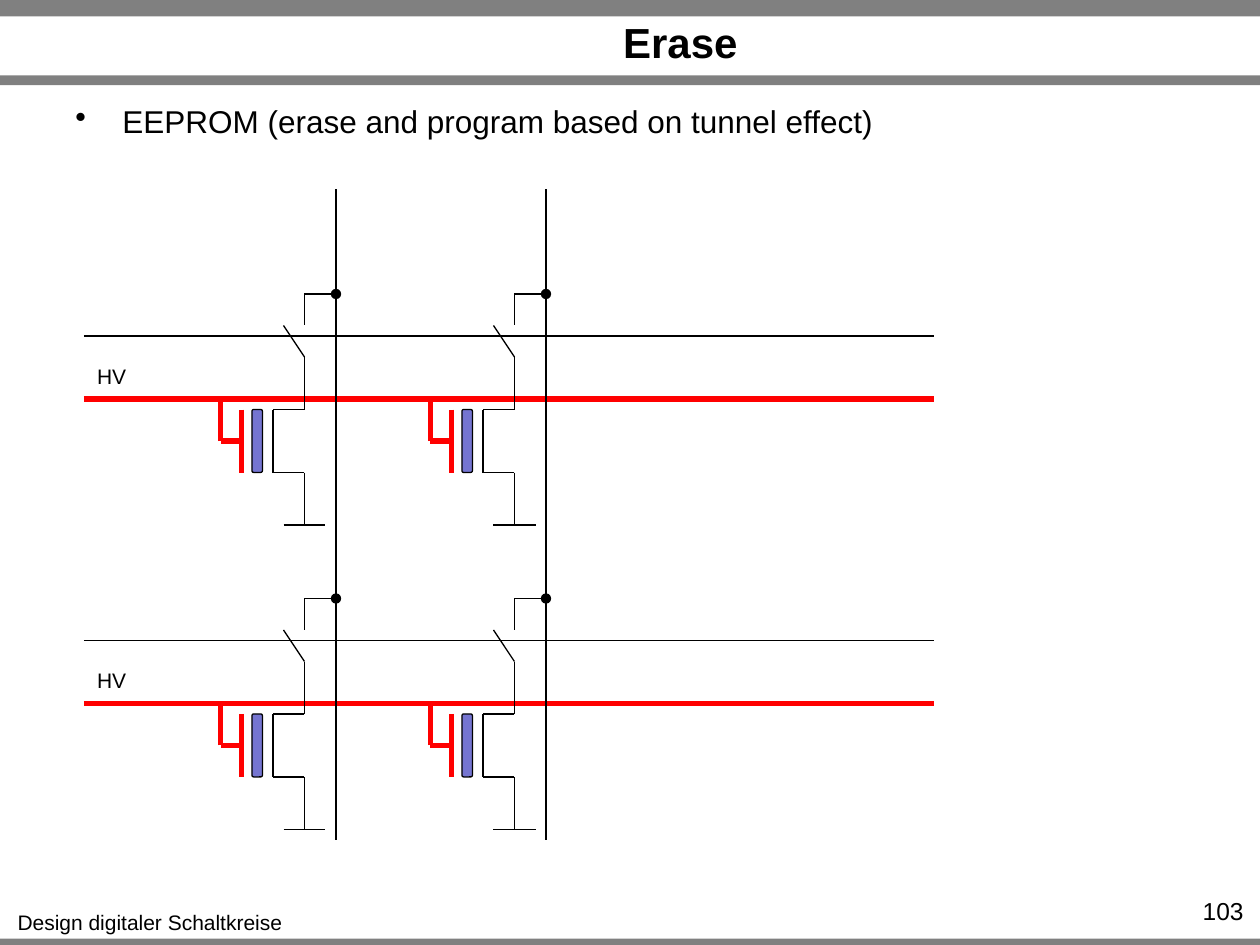
import pptx
import pptx.util
import pptx.dml.color
import pptx.enum.shapes
import pptx.enum.text
import pptx.oxml
import pptx.oxml.ns

Cm = pptx.util.Cm
Pt = pptx.util.Pt
Align = pptx.enum.text.PP_ALIGN
Anchor = pptx.enum.text.MSO_ANCHOR
Preset = pptx.enum.shapes.MSO_SHAPE

# Content
TITLE = "Erase"
BULLET = "EEPROM (erase and program based on tunnel effect)"
FOOTER = "Design digitaler Schaltkreise"
PAGE_NUMBER = "103"
WORD_LABEL = "HV"

THEME = {
    "font": "Arial", "ink": "000000", "bar": "808080",
    "high_voltage": "FF0000", "floating_gate": "7575D1",
    "title": 24, "body": 18, "number": 14, "small": 12,
    "thin": 0.75, "thick": 3,
}

# Page bars: top and height in cm
BARS = [(18.92, 0.2), (0, 0.33), (1.52, 0.2)]

# Circuit grid: one step is a twelfth of an inch
STEP = 2.54 / 12
BIT_LINES = [32, 52]
WORD_LINES = [38, 67]
BIT_SPAN = (18, 80)
WORD_SPAN = (8, 89)
SELECT_OFFSET = -6

# Cell lines in steps, measured from the crossing of bit and word line
CELL_LINES = [
    (-3, -10, -3, -7),   # switch, upper contact
    (-3, -4, -5, -7),    # switch, open arm
    (-3, -4, -3, 1),     # drain lead
    (-3, 1, -6, 1),      # drain
    (-6, 1, -6, 7),      # channel
    (-6, 7, -3, 7),      # source
    (-3, 7, -3, 12),     # source lead
    (-5, 12, -1, 12),    # ground
    (-3, -10, 0, -10),   # link to the bit line
]
GATE_LINES = [(-9, 1, -9, 7), (-9, 4, -11, 4), (-11, 4, -11, 0)]
NODE_LINE = (0, -8, 0, -10)
FLOATING_GATE = (-8, 1, 1, 6)


def color(name):
    return pptx.dml.color.RGBColor.from_string(THEME[name])


def grid(*steps):
    return [Cm(step * STEP) for step in steps]


def add_text(page, text, left, top, width, height, size="small", bold=False,
             align=Align.CENTER, anchor=Anchor.TOP, wrap=True, bullet_indent=None):
    box = page.shapes.add_textbox(Cm(left), Cm(top), Cm(width), Cm(height))
    frame = box.text_frame
    frame.word_wrap = wrap
    frame.vertical_anchor = anchor
    para = frame.paragraphs[0]
    para.alignment = align
    if bullet_indent:
        properties = para._p.get_or_add_pPr()
        properties.set("marL", str(Cm(bullet_indent)))
        properties.set("indent", str(-Cm(bullet_indent)))
        bullet = pptx.oxml.parse_xml(
            '<a:buChar %s char="•"/>' % pptx.oxml.ns.nsdecls("a"))
        properties.append(bullet)
    span = para.add_run()
    span.text = text
    span.font.name = THEME["font"]
    span.font.size = Pt(THEME[size])
    span.font.bold = bold
    span.font.color.rgb = color("ink")


def add_line(parent, points, ink="ink", weight="thin", dot=False):
    line = parent.shapes.add_connector(
        pptx.enum.shapes.MSO_CONNECTOR.STRAIGHT, *grid(*points))
    line.line.color.rgb = color(ink)
    line.line.width = Pt(THEME[weight])
    namespace = pptx.oxml.ns.nsdecls("a")
    if dot:
        line.line._get_or_add_ln().append(
            pptx.oxml.parse_xml('<a:tailEnd %s type="oval"/>' % namespace))
    line._element.spPr.append(pptx.oxml.parse_xml("<a:effectLst %s/>" % namespace))


def add_block(parent, preset, place, fill, outlined=False):
    block = parent.shapes.add_shape(preset, *place)
    block.shadow.inherit = False
    block.fill.solid()
    block.fill.fore_color.rgb = color(fill)
    if outlined:
        block.line.color.rgb = color("ink")
        block.line.width = Pt(THEME["thin"])
    else:
        block.line.fill.background()


def add_cell(page, bit, word):
    cell = page.shapes.add_group_shape()

    def shift(points):
        x1, y1, x2, y2 = points
        return bit + x1, word + y1, bit + x2, word + y2

    for points in CELL_LINES:
        add_line(cell, shift(points))
    for points in GATE_LINES:
        add_line(cell, shift(points), "high_voltage", "thick")
    add_line(cell, shift(NODE_LINE), dot=True)
    x, y, width, height = FLOATING_GATE
    add_block(cell, Preset.ROUNDED_RECTANGLE,
              grid(bit + x, word + y, width, height), "floating_gate", outlined=True)


def main():
    deck = pptx.Presentation()
    deck.slide_width, deck.slide_height = Cm(25.4), Cm(19.05)
    page = deck.slides.add_slide(deck.slide_layouts[6])

    # Frame and text
    for top, height in BARS:
        add_block(page, Preset.RECTANGLE,
                  (0, Cm(top), deck.slide_width, Cm(height)), "bar")
    add_text(page, FOOTER, 0.08, 18.21, 5.89, 0.76, wrap=False)
    add_text(page, TITLE, 3.3, 0.36, 20.83, 0.97, size="title", bold=True,
             anchor=Anchor.MIDDLE)
    add_text(page, BULLET, 1.27, 1.93, 22.86, 1.68, size="body",
             align=Align.LEFT, bullet_indent=0.95)
    add_text(page, PAGE_NUMBER, 23.11, 17.93, 2.21, 0.61, size="number",
             align=Align.RIGHT)

    # Word lines with their select lines, then bit lines
    start, end = WORD_SPAN
    for word in WORD_LINES:
        select = word + SELECT_OFFSET
        add_line(page, (start, word, end, word), "high_voltage", "thick")
        add_line(page, (start, select, end, select))
        add_text(page, WORD_LABEL, start * STEP, (word - 4) * STEP, 1.12, 0.76,
                 wrap=False)
    for bit in BIT_LINES:
        add_line(page, (bit, BIT_SPAN[0], bit, BIT_SPAN[1]))

    # Memory cells
    for word in WORD_LINES:
        for bit in BIT_LINES:
            add_cell(page, bit, word)

    deck.save("out.pptx")


if __name__ == "__main__":
    main()
